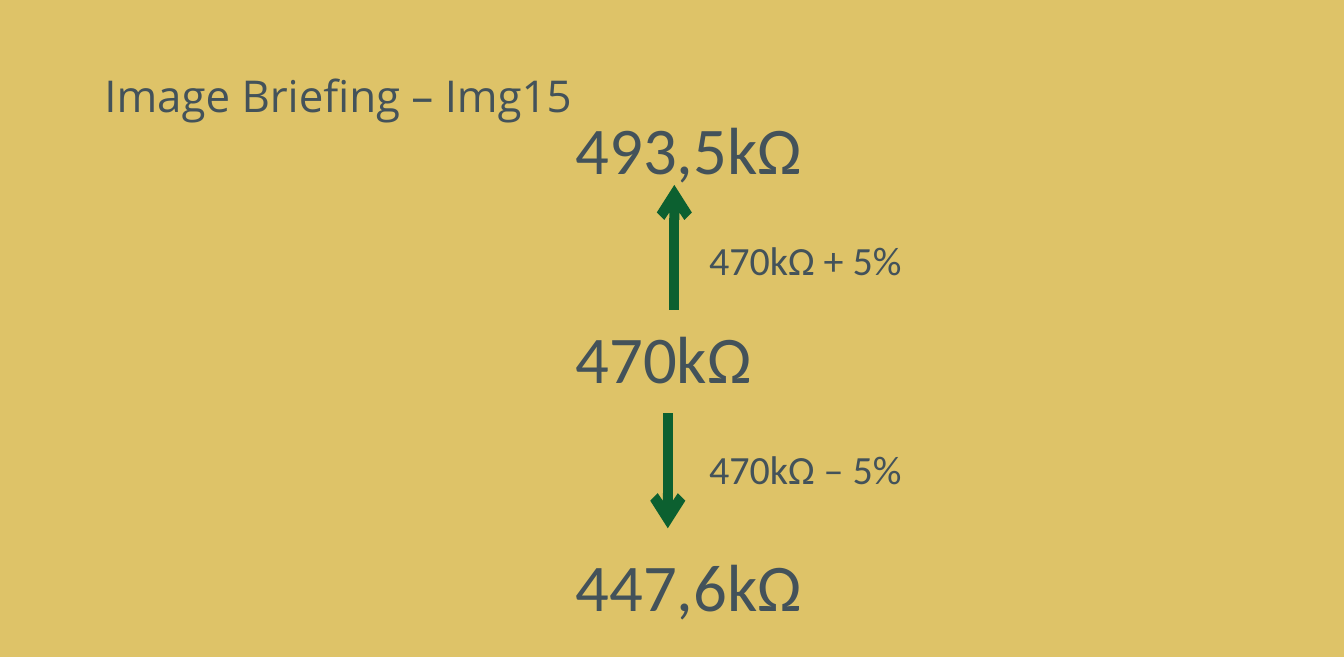
from lxml.etree import SubElement
from pptx import Presentation
from pptx.dml.color import RGBColor
from pptx.enum.shapes import MSO_CONNECTOR as CONN
from pptx.enum.text import MSO_ANCHOR as ANCHOR, MSO_AUTO_SIZE as FIT, PP_ALIGN as ALIGN
from pptx.oxml.ns import qn
from pptx.util import Pt

SAND, SLATE, GREEN = "DEC368", "43525A", "0C6030"


def color(hex_str):
    return RGBColor.from_string(hex_str)


def add_run(p, text, font, size):
    r = p.add_run()
    r.text = text
    r.font.name = font
    r.font.size = Pt(size)
    r.font.color.rgb = color(SLATE)


def place_title(s, text, x, y, w, h):
    sp = s.shapes.title
    sp.left, sp.top, sp.width, sp.height = Pt(x), Pt(y), Pt(w), Pt(h)
    tf = sp.text_frame
    tf.auto_size = FIT.NONE
    tf.vertical_anchor = ANCHOR.MIDDLE
    p = tf.paragraphs[0]
    p.alignment = ALIGN.LEFT
    p.line_spacing = 0.9
    add_run(p, text, "Open Sans", 26.3)


def add_label(s, text, size, x, y, w, h):
    sp = s.shapes.add_textbox(Pt(x), Pt(y), Pt(w), Pt(h))
    tf = sp.text_frame
    tf.word_wrap = False
    tf.auto_size = FIT.SHAPE_TO_FIT_TEXT
    add_run(tf.paragraphs[0], text, "Calibri", size)


def add_arrow(s, x, y1, y2):
    sp = s.shapes.add_connector(CONN.STRAIGHT, Pt(x), Pt(y1), Pt(x), Pt(y2))
    sp.line.color.rgb = color(GREEN)
    sp.line.width = Pt(6)
    SubElement(sp.line._get_or_add_ln(), qn("a:tailEnd"), type="arrow")
    SubElement(sp._element.spPr, qn("a:effectLst"))


def draw_tolerance(s, x, y, w, h):
    values = [("493,5kΩ", 0, 160.6), ("470kΩ", 125.3, 130), ("447,6kΩ", h - 55.4, 160.6)]
    for text, dy, width in values:
        add_label(s, text, 40, x, y + dy, width, 55.4)
    add_arrow(s, x + 66.2, y + 124.6, y + 49.7)
    add_arrow(s, x + 62.3, y + 186.6, y + 255.6)
    for text, dy in [("470kΩ + 5%", 76.3), ("470kΩ – 5%", 202)]:
        add_label(s, text, 24, x + w - 131, y + dy, 131, 36)


def build_slide(prs):
    s = prs.slides.add_slide(prs.slide_layouts[5])
    s.background.fill.solid()
    s.background.fill.fore_color.rgb = color(SAND)
    place_title(s, "Image Briefing – Img15", 55.4, 20.9, 695.5, 76.3)
    draw_tolerance(s, 338.4, 61.2, 211, 317.2)


def main():
    prs = Presentation()
    prs.slide_width, prs.slide_height = Pt(806.4), Pt(394)
    build_slide(prs)
    prs.save("out.pptx")


if __name__ == "__main__":
    main()
